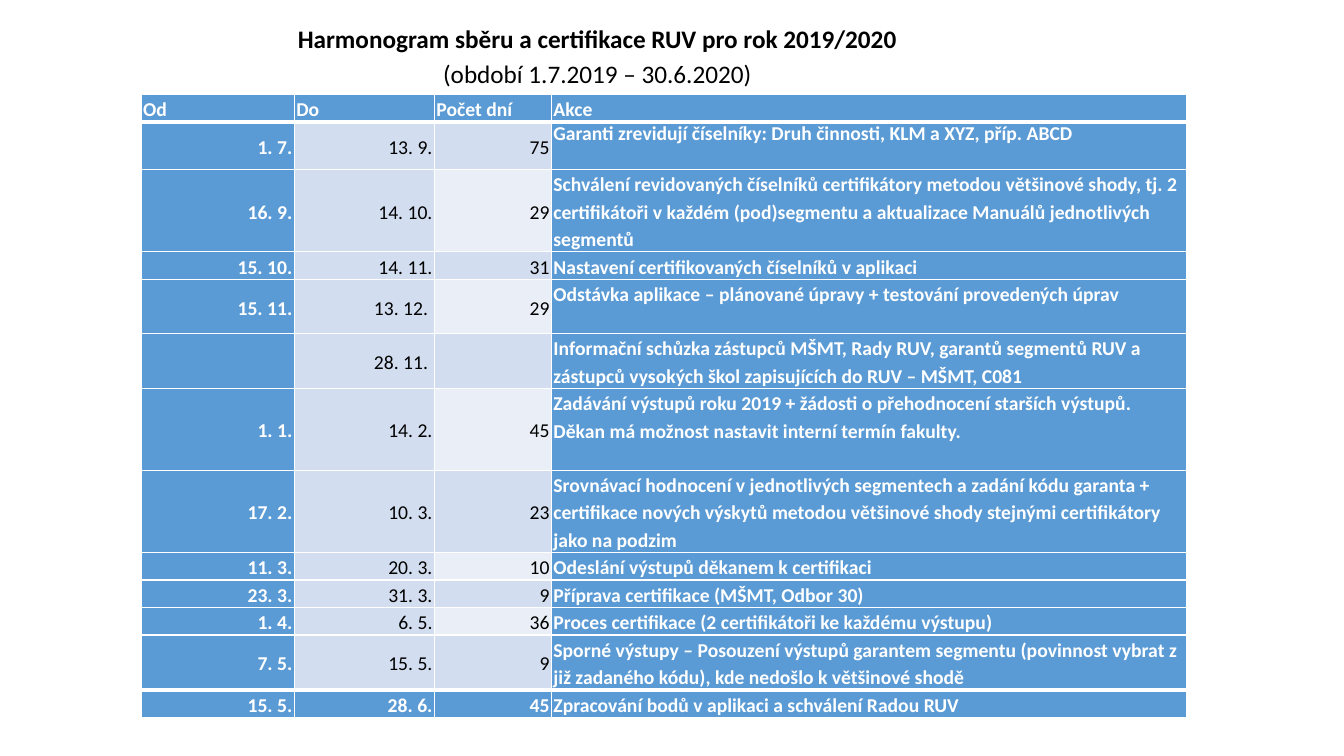
"""Build the slide with the RUV collection and certification schedule."""
import pptx
import pptx.util
import pptx.dml.color
import pptx.enum.text
import pptx.oxml
import pptx.oxml.ns

ALIGN = pptx.enum.text.PP_ALIGN
ANCHOR = pptx.enum.text.MSO_ANCHOR
Inches = pptx.util.Inches
BLUE, LIGHT, PALE, WHITE, BLACK = "5B9BD5", "D2DEEF", "EAEFF7", "FFFFFF", "000000"
LINE = 0.27


def rgb(value):
    return pptx.dml.color.RGBColor.from_string(value)


def write(tf, text, align, size, color, bolds):
    tf.word_wrap = True
    for i, line in enumerate(text.split("\n")):
        p = tf.paragraphs[0] if i == 0 else tf.add_paragraph()
        p.alignment, p.line_spacing = align, 1.15
        r = p.add_run()
        r.text = line
        look = {"name": "Calibri", "size": pptx.util.Pt(size), "bold": bolds[i]}
        for key, value in look.items():
            setattr(r.font, key, value)
        r.font.color.rgb = rgb(color)


schedule = [
    ("Od", "Do", "Počet dní", "Akce", 1),
    ("1. 7.", "13. 9.", "75", "Garanti zrevidují číselníky: Druh činnosti, KLM a XYZ, příp. ABCD", 1.74),
    ("16. 9.", "14. 10.", "29", "Schválení revidovaných číselníků certifikátory metodou většinové shody, tj. 2 "
     "certifikátoři v každém (pod)segmentu a aktualizace Manuálů jednotlivých segmentů", 3),
    ("15. 10.", "14. 11.", "31", "Nastavení certifikovaných číselníků v aplikaci", 1),
    ("15. 11.", "13. 12. ", "29", "Odstávka aplikace – plánované úpravy + testování provedených úprav", 2),
    ("", "28. 11. ", "", "Informační schůzka zástupců MŠMT, Rady RUV, garantů segmentů RUV a "
     "zástupců vysokých škol zapisujících do RUV – MŠMT, C081", 2),
    ("1. 1.", "14. 2.", "45", "Zadávání výstupů roku 2019 + žádosti o přehodnocení starších výstupů.\n"
     "Děkan má možnost nastavit interní termín fakulty.", 3),
    ("17. 2.", "10. 3.", "23", "Srovnávací hodnocení v jednotlivých segmentech a zadání kódu garanta + "
     "certifikace nových výskytů metodou většinové shody stejnými certifikátory jako na podzim", 3),
    ("11. 3.", "20. 3.", "10", "Odeslání výstupů děkanem k certifikaci", 1),
    ("23. 3.", "31. 3.", "9", "Příprava certifikace (MŠMT, Odbor 30)", 1),
    ("1. 4.", "6. 5.", "36", "Proces certifikace (2 certifikátoři ke každému výstupu)", 1),
    ("7. 5.", "15. 5.", "9", "Sporné výstupy – Posouzení výstupů garantem segmentu (povinnost vybrat "
     "z již zadaného kódu), kde nedošlo k většinové shodě", 2),
    ("15. 5.", "28. 6.", "45", "Zpracování bodů v aplikaci a schválení Radou RUV", 1),
]
widths = [1.52, 1.39, 1.16, 6.3]
last = len(schedule) - 1

prs = pptx.Presentation()
prs.slide_width, prs.slide_height = Inches(13.33), Inches(7.5)
s = prs.slides.add_slide(prs.slide_layouts[5])

title = s.shapes.title
for key, value in {"left": 1.6, "top": 0.14, "width": 8.65, "height": 0.8}.items():
    setattr(title, key, Inches(value))
tf = title.text_frame
tf.auto_size = pptx.enum.text.MSO_AUTO_SIZE.NONE
tf.vertical_anchor = ANCHOR.TOP
write(tf, "Harmonogram sběru a certifikace RUV pro rok 2019/2020\n(období 1.7.2019 – 30.6.2020)",
      ALIGN.CENTER, 18, BLACK, [True, False])

height = LINE * sum(row[-1] for row in schedule)
table = s.shapes.add_table(len(schedule), len(widths), Inches(1.4), Inches(0.94),
                           Inches(sum(widths)), Inches(height)).table
for column, width in zip(table.columns, widths):
    column.width = Inches(width)

for i, (*texts, lines) in enumerate(schedule):
    table.rows[i].height = Inches(LINE * lines)
    for j, text in enumerate(texts):
        cell = table.cell(i, j)
        margins = {"margin_left": 0.02, "margin_right": 0.02, "margin_top": 0, "margin_bottom": 0}
        for key, value in margins.items():
            setattr(cell, key, Inches(value))
        numeric = i > 0 and j < 3
        cell.vertical_anchor = ANCHOR.MIDDLE if numeric else ANCHOR.TOP
        plain = 0 < i < last and j in (1, 2)
        write(cell.text_frame, text, ALIGN.RIGHT if numeric else ALIGN.LEFT, 14,
              BLACK if plain else WHITE, [not plain] * 2)
        if i == 1 and j == 3:
            cell.text_frame.paragraphs[0].line_spacing = 1.0
        edges = {"L": 1, "R": 1, "T": 3 if i in (1, last) else 1, "B": 3 if i in (0, last - 1) else 1}
        for side, points in edges.items():
            cell._tc.get_or_add_tcPr().append(pptx.oxml.parse_xml(
                f'<a:ln{side} {pptx.oxml.ns.nsdecls("a")} w="{pptx.util.Pt(points)}">'
                f'<a:solidFill><a:srgbClr val="{WHITE}"/></a:solidFill></a:ln{side}>'))
        cell.fill.solid()
        shade = PALE if j == 2 and i % 2 == 0 else LIGHT
        cell.fill.fore_color.rgb = rgb(shade if plain else BLUE)

prs.save("out.pptx")
